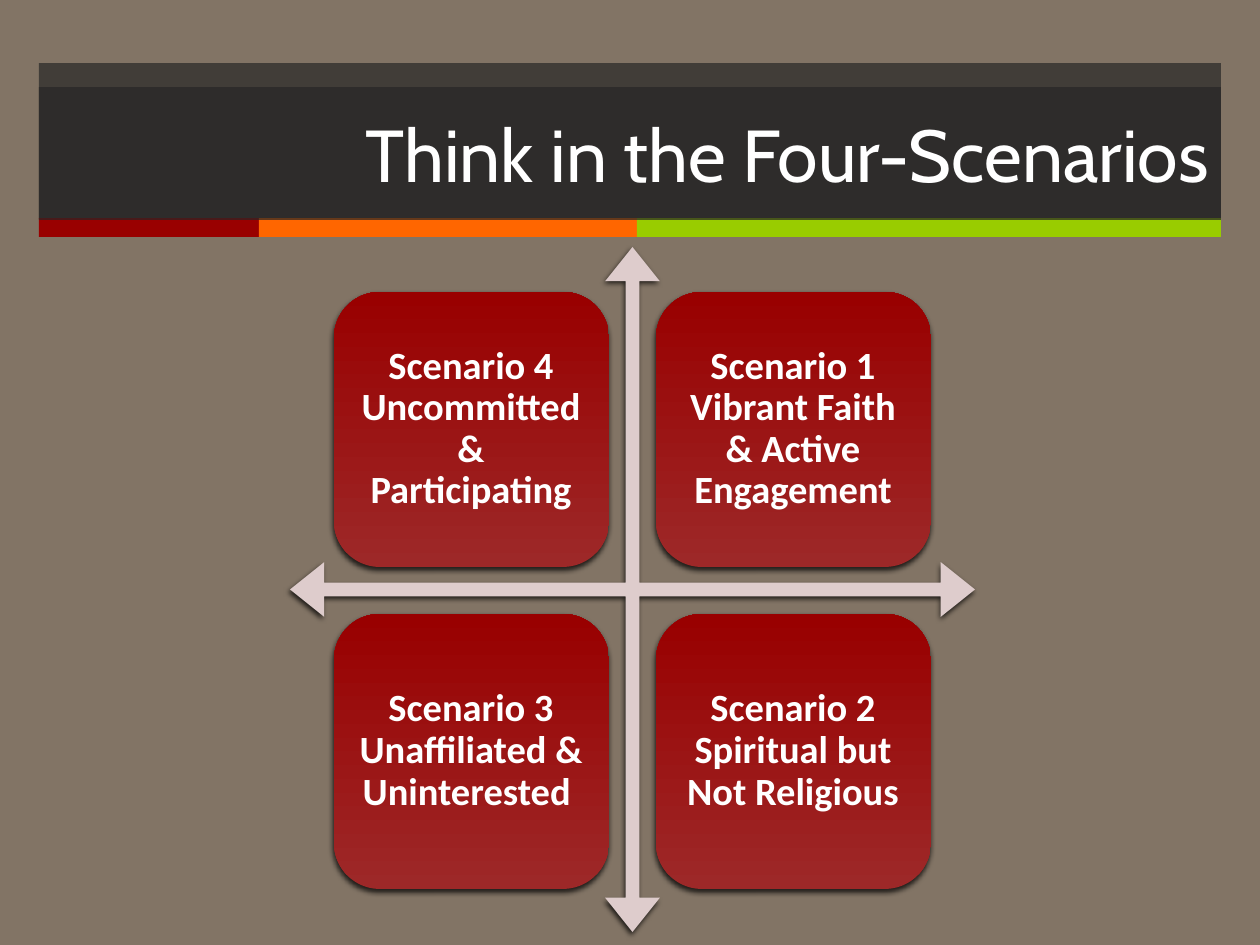
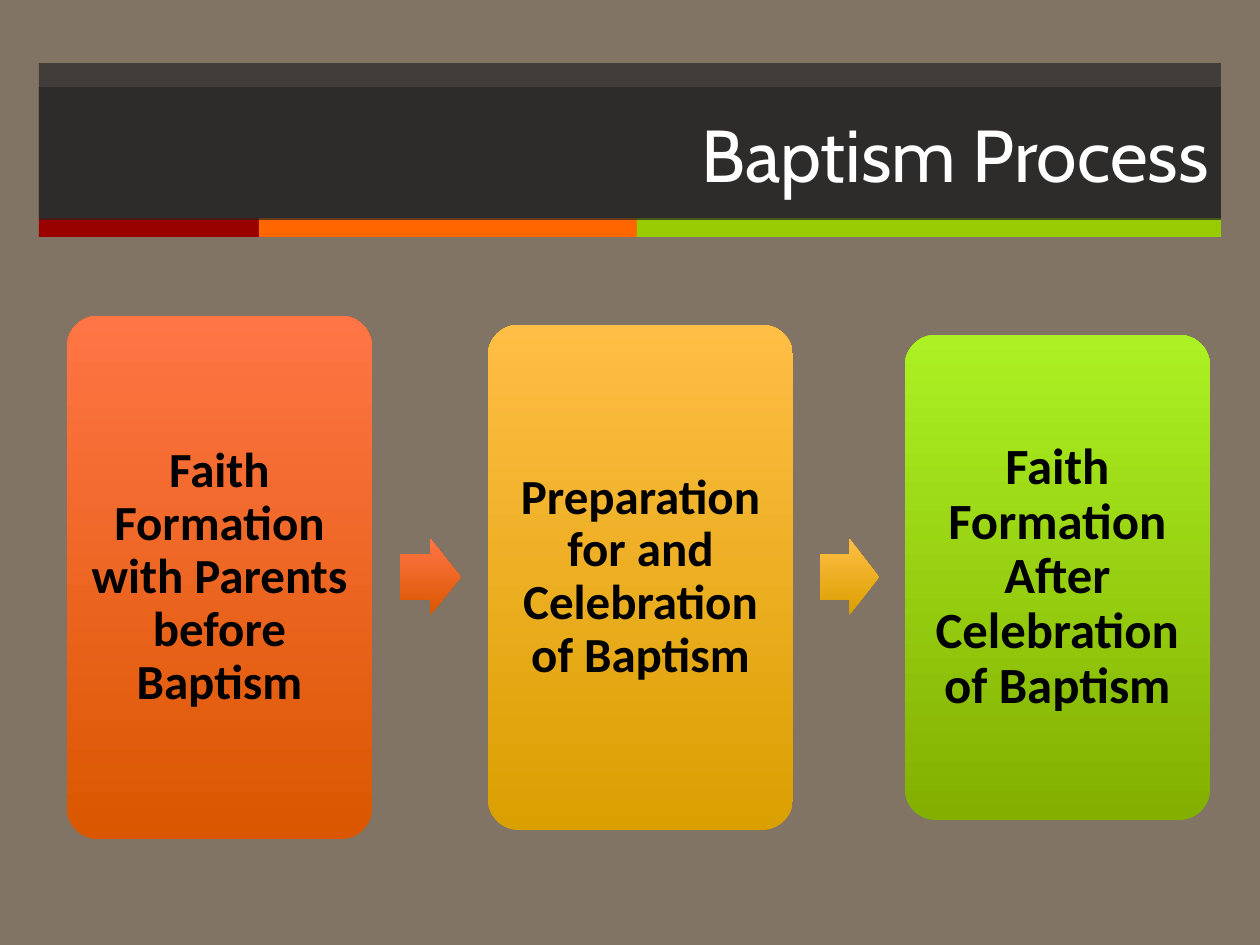
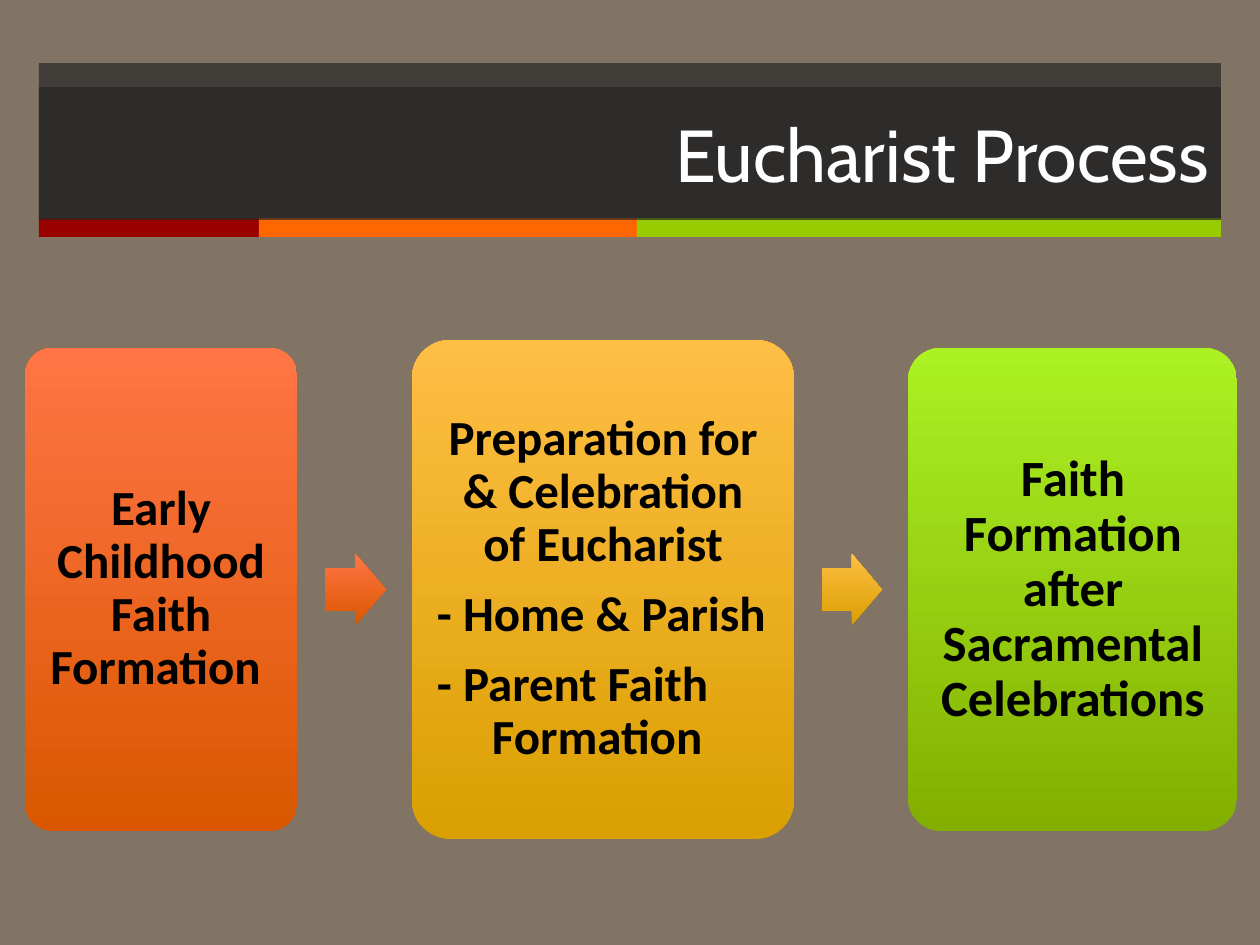
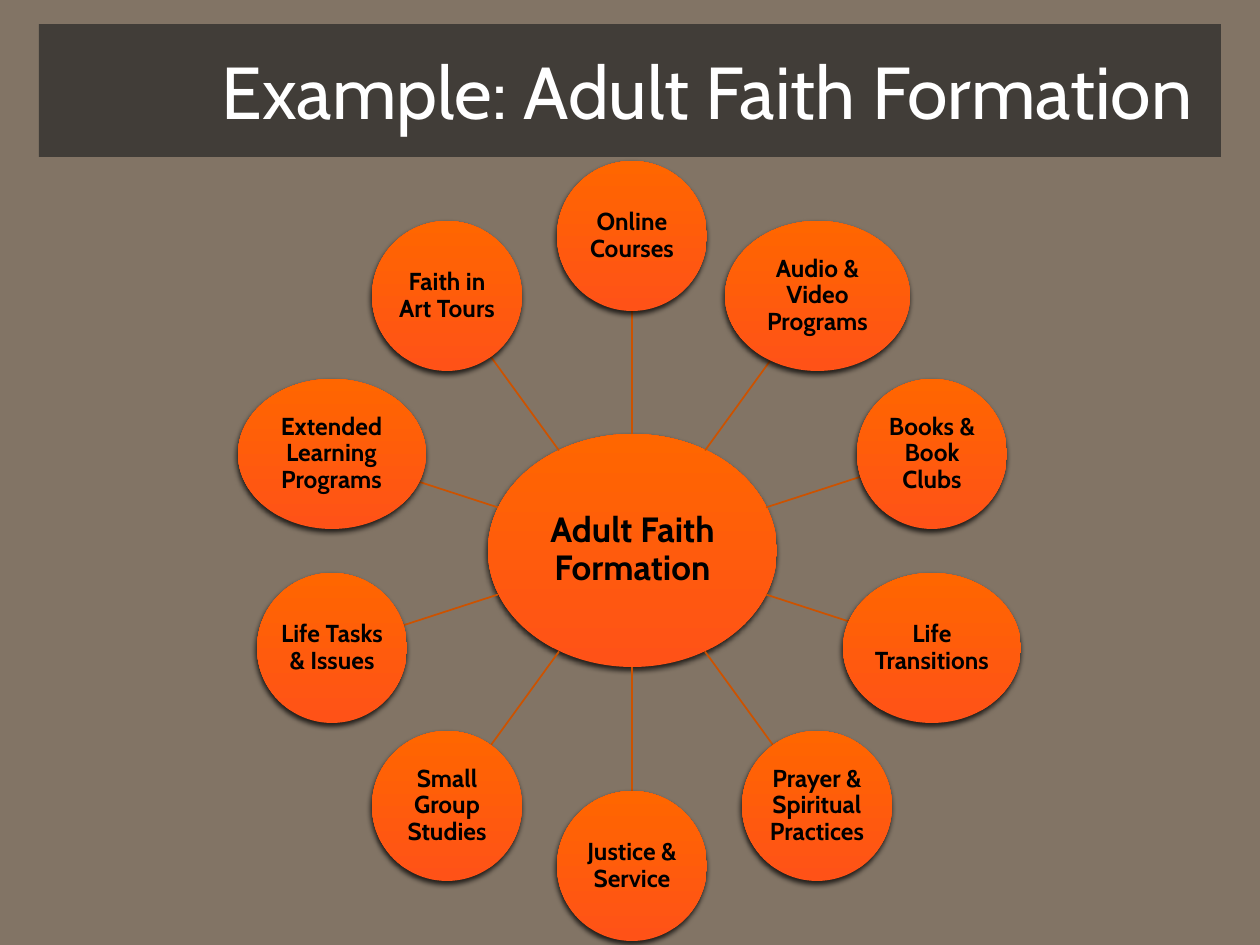
"""Build four faith formation slides: scenarios, two processes and a program wheel."""
from dataclasses import dataclass
from math import cos, hypot, pi, sin
from typing import NamedTuple

from pptx import Presentation
from pptx.dml.color import RGBColor
from pptx.enum.shapes import MSO_CONNECTOR, MSO_SHAPE
from pptx.enum.text import MSO_ANCHOR, PP_ALIGN
from pptx.oxml.ns import qn
from pptx.shapes.autoshape import Shape
from pptx.slide import Slide
from pptx.text.text import _Paragraph as Paragraph
from pptx.util import Emu, Pt
from lxml import etree

RECT = MSO_SHAPE.RECTANGLE
ROUNDED = MSO_SHAPE.ROUNDED_RECTANGLE
OVAL = MSO_SHAPE.OVAL
RIGHT_ARROW = MSO_SHAPE.RIGHT_ARROW
QUAD_ARROW = MSO_SHAPE.QUAD_ARROW
STRAIGHT = MSO_CONNECTOR.STRAIGHT
LEFT, CENTER, RIGHT = PP_ALIGN.LEFT, PP_ALIGN.CENTER, PP_ALIGN.RIGHT
MIDDLE = MSO_ANCHOR.MIDDLE

EMU_PER_PX = 914400 / 126
PAGE_WIDTH, PAGE_HEIGHT = 1260, 945
BAND_LEFT, BAND_WIDTH = 39, 1182
TITLE_FONT, BODY_FONT = "Cabin", "Calibri"
ROUND_INSET, OVAL_INSET = 0.29, 0.146

COLORS = {
    "page": "827465",
    "band": "262626",
    "red": "990000",
    "orange": "FF6600",
    "green": "99CC00",
    "axes": "DECCCC",
    "spoke": "CC5200",
    "white": "FFFFFF",
    "black": "000000",
}
GRADIENTS = {
    "red": ("9D2828", "990000"),
    "orange": ("DA5700", "FF7545"),
    "amber": ("DA9F00", "FFBE45"),
    "lime": ("83AF00", "ABF123"),
    "wheel": ("FF5217", "FF6600"),
}


class Area(NamedTuple):
    """A rectangle in px."""
    left: int
    top: int
    width: int
    height: int

    def inset(self, across: float, down: float) -> "Area":
        """Return the rectangle shrunk on every side."""
        return Area(round(self.left + across), round(self.top + down),
                    round(self.width - 2 * across), round(self.height - 2 * down))


class Line(NamedTuple):
    """One paragraph with its alignment and hanging indent in px."""
    text: str
    align: PP_ALIGN = CENTER
    hanging: int = 0


class TextStyle(NamedTuple):
    """Font and padding of a label."""
    font: str
    size: int
    color: str
    padding: int


@dataclass(frozen=True)
class Card:
    """A step of a process."""
    left: int
    width: int
    height: int
    gradient: str
    size: int
    lines: tuple[Line, ...]


@dataclass(frozen=True)
class Process:
    """A row of cards joined by arrows."""
    title: str
    middle: int
    arrow_height: int
    cards: tuple[Card, ...]


class Node(NamedTuple):
    """A program on the wheel."""
    text: str
    width: int = 150


STRIPES = (("red", 220), ("orange", 378), ("green", 584))
SCENARIOS = (
    ("Scenario 4 Uncommitted & Participating", "Scenario 1 Vibrant Faith & Active Engagement"),
    ("Scenario 3 Unaffiliated & Uninterested ", "Scenario 2 Spiritual but Not Religious"),
)
PROCESSES = (
    Process("Baptism Process", 577, 76, (
        Card(67, 305, 523, "orange", 28,
             (Line("Faith Formation with Parents before Baptism"),)),
        Card(488, 305, 505, "amber", 28,
             (Line("Preparation for and Celebration of Baptism"),)),
        Card(905, 305, 485, "lime", 29,
             (Line("Faith Formation After Celebration of Baptism"),)),
    )),
    Process("Eucharist Process", 589, 71, (
        Card(25, 272, 483, "orange", 28,
             (Line("Early Childhood Faith Formation "),)),
        Card(412, 382, 499, "amber", 28,
             (Line("Preparation for & Celebration of Eucharist"),
              Line("- Home & Parish", LEFT),
              Line("- Parent Faith\vFormation", LEFT, 55))),
        Card(908, 329, 483, "lime", 29,
             (Line("Faith Formation after Sacramental Celebrations"),)),
    )),
)
NODES = (
    Node("Online Courses"),
    Node("Audio & Video Programs", 185),
    Node("Books & Book Clubs"),
    Node("Life Transitions", 178),
    Node("Prayer & Spiritual Practices"),
    Node("Justice & Service"),
    Node("Small Group Studies"),
    Node("Life Tasks & Issues"),
    Node("Extended Learning Programs", 188),
    Node("Faith in Art Tours"),
)


def px(length: float) -> Emu:
    """Turn px into EMU."""
    return Emu(round(length * EMU_PER_PX))


def rgb(name: str) -> RGBColor:
    """Look up a named colour."""
    return RGBColor.from_string(COLORS[name])


def add_figure(page: Slide, kind: MSO_SHAPE, area: Area,
               adjustments: tuple[float, ...] = ()) -> Shape:
    """Add a preset shape without outline or shadow."""
    shape = page.shapes.add_shape(kind, *map(px, area))
    shape.shadow.inherit = False
    shape.line.fill.background()
    for index, value in enumerate(adjustments):
        shape.adjustments[index] = value
    return shape


def fill_solid(shape: Shape, color: str, opacity: int = 100) -> None:
    """Fill a shape with one colour, optionally see-through."""
    shape.fill.solid()
    shape.fill.fore_color.rgb = rgb(color)
    if opacity < 100:
        fill = shape.element.spPr.find(qn("a:solidFill"))
        etree.SubElement(fill[0], qn("a:alpha"), val=str(opacity * 1000))


def fill_gradient(shape: Shape, gradient: str) -> None:
    """Fill a shape with a gradient running from bottom to top."""
    shape.fill.gradient()
    shape.fill.gradient_angle = 90
    for stop, color in zip(shape.fill.gradient_stops, GRADIENTS[gradient]):
        stop.color.rgb = RGBColor.from_string(color)


def add_shadow(shape: Shape) -> None:
    """Give a shape the soft shadow of the diagrams."""
    effects = shape.element.spPr.find(qn("a:effectLst"))
    shadow = etree.SubElement(effects, qn("a:outerShdw"), blurRad=str(Pt(3)),
                              dist=str(Pt(2)), dir=str(110 * 60000), rotWithShape="0")
    color = etree.SubElement(shadow, qn("a:srgbClr"), val=COLORS["black"])
    etree.SubElement(color, qn("a:alpha"), val="75000")


def set_font(paragraph: Paragraph, name: str, size: int, color: str, bold: bool) -> None:
    """Set the font of a whole paragraph."""
    font = paragraph.font
    font.name, font.size, font.bold = name, Pt(size), bold
    font.color.rgb = rgb(color)


def add_label(page: Slide, area: Area, lines: tuple[Line, ...], style: TextStyle) -> None:
    """Add a bold, vertically centred text box."""
    frame = page.shapes.add_textbox(*map(px, area)).text_frame
    frame.word_wrap = True
    frame.vertical_anchor = MIDDLE
    frame.margin_left = frame.margin_right = px(style.padding)
    frame.margin_top = frame.margin_bottom = px(style.padding)
    for index, line in enumerate(lines):
        paragraph = frame.add_paragraph() if index else frame.paragraphs[0]
        paragraph.text = line.text
        paragraph.alignment = line.align
        paragraph.line_spacing = 0.9
        paragraph.space_after = Pt(0.35 * style.size)
        if line.hanging:
            properties = paragraph._p.get_or_add_pPr()
            properties.set("marL", str(px(line.hanging)))
            properties.set("indent", str(-px(line.hanging)))
        set_font(paragraph, style.font, style.size, style.color, True)


def add_page(deck: Presentation, title: str, title_top: int = 87,
             striped: bool = True) -> Slide:
    """Add a page with its background, bands and title."""
    page = deck.slides.add_slide(deck.slide_layouts[6])
    page.background.fill.solid()
    page.background.fill.fore_color.rgb = rgb("page")
    if striped:
        band = add_figure(page, RECT, Area(BAND_LEFT, 63, BAND_WIDTH, 156))
        fill_solid(band, "band", 70)
        left = BAND_LEFT
        for color, width in STRIPES:
            fill_solid(add_figure(page, RECT, Area(left, 218, width, 19)), color)
            left += width
    box = add_figure(page, RECT, Area(BAND_LEFT, title_top, BAND_WIDTH, 133))
    fill_solid(box, "band", 70)
    box.text_frame.word_wrap = True
    box.text_frame.vertical_anchor = MIDDLE
    paragraph = box.text_frame.paragraphs[0]
    paragraph.text = title
    paragraph.alignment = RIGHT
    set_font(paragraph, TITLE_FONT, 42, "white", False)
    return page


def add_scenarios(deck: Presentation) -> None:
    """Add the two by two scenario matrix."""
    page = add_page(deck, "Think in the Four-Scenarios")
    axes = add_figure(page, QUAD_ARROW, Area(290, 247, 685, 685), (0.02, 0.04, 0.05))
    fill_solid(axes, "axes")
    add_shadow(axes)
    left, top, side, pitch, corner = 334, 292, 275, 322, 0.1667
    style = TextStyle(BODY_FONT, 22, "white", 11)
    for row, texts in enumerate(SCENARIOS):
        for column, text in enumerate(texts):
            area = Area(left + column * pitch, top + row * pitch, side, side)
            tile = add_figure(page, ROUNDED, area)
            fill_gradient(tile, "red")
            add_shadow(tile)
            inset = side * corner * ROUND_INSET
            add_label(page, area.inset(inset, inset), (Line(text),), style)


def add_process(deck: Presentation, process: Process) -> None:
    """Add a process page, with an arrow in each gap between cards."""
    page = add_page(deck, process.title)
    corner = 0.1
    for card, following in zip(process.cards, (*process.cards[1:], None)):
        area = Area(card.left, process.middle - card.height // 2, card.width, card.height)
        fill_gradient(add_figure(page, ROUNDED, area, (corner,)), card.gradient)
        inset = min(card.width, card.height) * corner * ROUND_INSET
        add_label(page, area.inset(inset, inset), card.lines,
                  TextStyle(BODY_FONT, card.size, "black", 14))
        if following:
            right = card.left + card.width
            gap = following.left - right
            arrow_area = Area(right + round(0.245 * gap),
                              process.middle - process.arrow_height // 2,
                              round(0.53 * gap), process.arrow_height)
            arrow = add_figure(page, RIGHT_ARROW, arrow_area, (0.6, 0.5))
            fill_gradient(arrow, card.gradient)


def add_bubble(page: Slide, x: float, y: float, width: int, height: int,
               text: str, size: int) -> None:
    """Add a labelled ellipse around a centre."""
    area = Area(round(x - width / 2), round(y - height / 2), width, height)
    bubble = add_figure(page, OVAL, area)
    fill_gradient(bubble, "wheel")
    add_shadow(bubble)
    add_label(page, area.inset(width * OVAL_INSET, height * OVAL_INSET), (Line(text),),
              TextStyle(TITLE_FONT, size, "black", 1))


def add_spoke(page: Slide, start: tuple[float, float], end: tuple[float, float]) -> None:
    """Add a thin line without shadow."""
    spoke = page.shapes.add_connector(STRAIGHT, *map(px, (*start, *end)))
    spoke.line.color.rgb = rgb("spoke")
    spoke.line.width = Pt(1)
    etree.SubElement(spoke.element.spPr, qn("a:effectLst"))


def add_wheel(deck: Presentation) -> None:
    """Add the hub with its programs on a circle."""
    page = add_page(deck, "Example: Adult Faith Formation ", 24, False)
    hub_x, hub_y, hub_width, hub_height = 632, 551, 289, 233
    orbit, node_height = 315, 150
    add_bubble(page, hub_x, hub_y, hub_width, hub_height, "Adult Faith Formation", 20)
    for index, node in enumerate(NODES):
        angle = 2 * pi * index / len(NODES)
        across, down = sin(angle), -cos(angle)
        near = 0.5 / hypot(across / hub_width, down / hub_height)
        far = orbit - 0.5 / hypot(across / node.width, down / node_height)
        add_spoke(page, (hub_x + near * across, hub_y + near * down),
                  (hub_x + far * across, hub_y + far * down))
        add_bubble(page, hub_x + orbit * across, hub_y + orbit * down,
                   node.width, node_height, node.text, 14)


def main() -> None:
    """Build and save the deck."""
    deck = Presentation()
    deck.slide_width, deck.slide_height = px(PAGE_WIDTH), px(PAGE_HEIGHT)
    add_scenarios(deck)
    for process in PROCESSES:
        add_process(deck, process)
    add_wheel(deck)
    deck.save("out.pptx")


if __name__ == "__main__":
    main()
